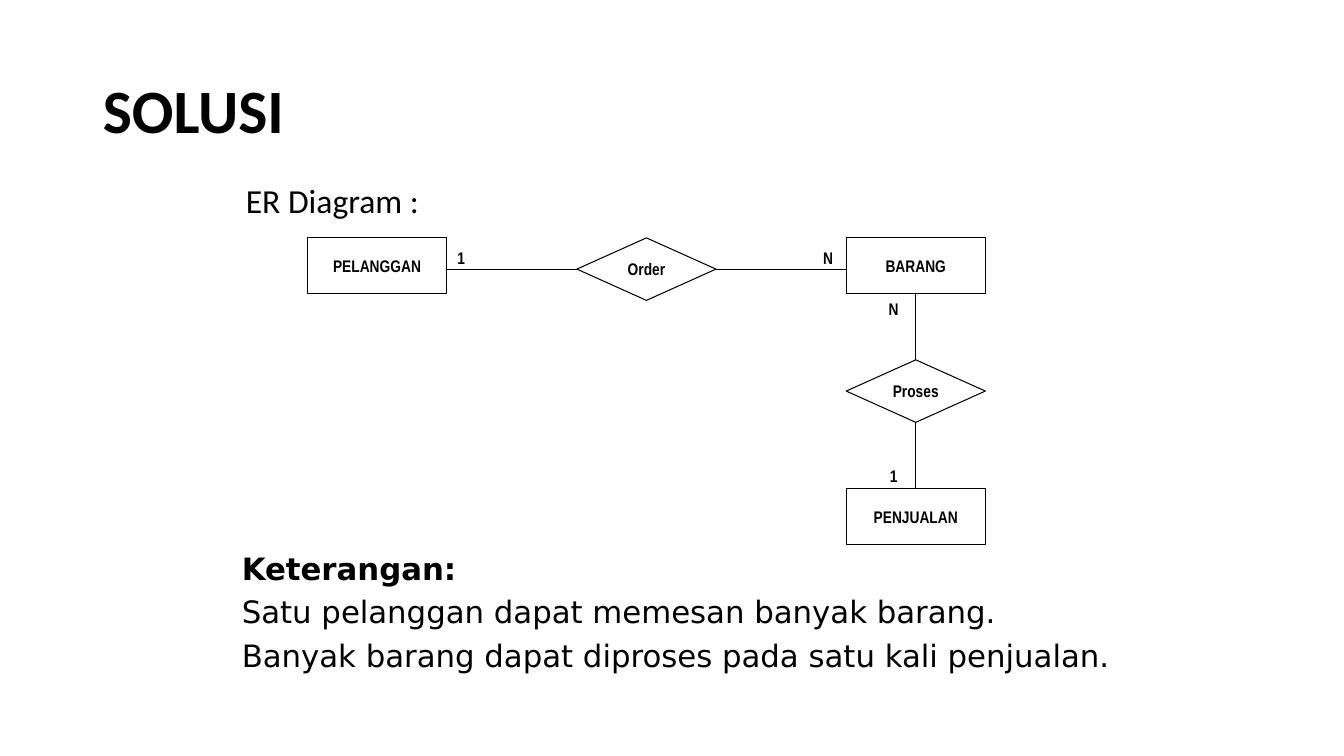
import pptx
import pptx.dml.color
import pptx.enum.shapes
import pptx.enum.text
import pptx.oxml.ns
import pptx.util
from lxml import etree

BLACK = pptx.dml.color.RGBColor(0x00, 0x00, 0x00)
WHITE = pptx.dml.color.RGBColor(0xFF, 0xFF, 0xFF)
PRESET = pptx.enum.shapes.MSO_SHAPE
ALIGN = pptx.enum.text.PP_ALIGN
ANCHOR = pptx.enum.text.MSO_ANCHOR
TOP, LEFT, BOTTOM, RIGHT = range(4)


class ErSlide:
    """Places elements on a grid of 100 columns by 100 rows."""

    title_font, body_font, diagram_font = "Calibri", "DejaVu Sans", "Arial Narrow"
    label_size = 12
    line_width = pptx.util.Pt(0.75)
    sizes = {PRESET.RECTANGLE: (10.35, 7.33), PRESET.DIAMOND: (10.35, 8.27)}
    label_box = (5.78, 4.4)

    def __init__(self, deck):
        self.slide = deck.slides.add_slide(deck.slide_layouts[5])
        self.column = deck.slide_width / 100
        self.row = deck.slide_height / 100

    def box(self, left, top, width, height):
        return (round(left * self.column), round(top * self.row),
                round(width * self.column), round(height * self.row))

    def centred(self, x, y, size):
        width, height = size
        return self.box(x - width / 2, y - height / 2, width, height)

    def format(self, paragraph, font, size, bold=False, align=ALIGN.LEFT):
        paragraph.alignment = align
        for run in paragraph.runs:
            run.font.name = font
            run.font.size = pptx.util.Pt(size)
            run.font.bold = bold
            run.font.color.rgb = BLACK

    def title(self, text, *place):
        heading = self.slide.shapes.title
        heading.left, heading.top, heading.width, heading.height = self.box(*place)
        heading.text_frame.text = text
        heading.text_frame.vertical_anchor = ANCHOR.MIDDLE
        heading.text_frame.paragraphs[0].line_spacing = 0.9
        self.format(heading.text_frame.paragraphs[0], self.title_font, 44, bold=True)

    def text(self, lines, place, font, size, hanging, spacing=1.0, bold_first=False):
        frame = self.slide.shapes.add_textbox(*self.box(*place)).text_frame
        frame.word_wrap = True
        frame.text = "\n".join(lines)
        for number, paragraph in enumerate(frame.paragraphs):
            indent = pptx.util.Inches(hanging)
            properties = paragraph._p.get_or_add_pPr()
            properties.set("marL", str(indent))
            properties.set("indent", str(-indent))
            paragraph.line_spacing = spacing
            if number:
                paragraph.space_before = pptx.util.Pt(5)
            self.format(paragraph, font, size, bold=bold_first and number == 0)

    def node(self, name, preset, x, y):
        node = self.slide.shapes.add_shape(preset, *self.centred(x, y, self.sizes[preset]))
        node.shadow.inherit = False
        node.fill.solid()
        node.fill.fore_color.rgb = WHITE
        node.line.color.rgb = BLACK
        node.line.width = self.line_width
        frame = node.text_frame
        frame.margin_left = frame.margin_right = frame.margin_top = frame.margin_bottom = 0
        frame.word_wrap = False
        frame.vertical_anchor = ANCHOR.MIDDLE
        frame.text = name
        self.format(frame.paragraphs[0], self.diagram_font, self.label_size, True, ALIGN.CENTER)
        return node

    def link(self, relation, relation_side, entity, entity_side):
        """Horizontal links run level with the diamond, vertical ones join both sides."""
        level = relation.top + relation.height // 2
        edge = entity.left + (entity.width if entity_side == RIGHT else 0)
        link = self.slide.shapes.add_connector(
            pptx.enum.shapes.MSO_CONNECTOR.STRAIGHT, relation.left, level, edge, level)
        link.begin_connect(relation, relation_side)
        if entity_side in (TOP, BOTTOM):
            link.end_connect(entity, entity_side)
        link.line.color.rgb = BLACK
        link.line.width = self.line_width
        etree.SubElement(link._element.spPr, pptx.oxml.ns.qn("a:effectLst"))

    def cardinality(self, mark, x, y):
        frame = self.slide.shapes.add_textbox(*self.centred(x, y, self.label_box)).text_frame
        frame.word_wrap = True
        frame.text = mark
        self.format(frame.paragraphs[0], self.diagram_font, self.label_size, True, ALIGN.CENTER)


def main():
    deck = pptx.Presentation()
    deck.slide_width = pptx.util.Inches(13.33)
    deck.slide_height = pptx.util.Inches(7.5)
    solution = ErSlide(deck)

    # Title, caption and explanation
    solution.title("SOLUSI", 6.9, 5.33, 86.25, 19.33)
    solution.text(["ER Diagram :"], (17.55, 23.73, 65.63, 13.6),
                  solution.title_font, 24, hanging=0.25, spacing=0.9)
    solution.text(["Keterangan:",
                   "Satu pelanggan dapat memesan banyak barang.",
                   "Banyak barang dapat diproses pada satu kali penjualan."],
                  (17.25, 72, 67.65, 18.93),
                  solution.body_font, 22, hanging=0.51, bold_first=True)

    # Entities and relations
    customer_x, order_x, goods_x = (28.06 + 20.04 * step for step in range(3))
    customer = solution.node("PELANGGAN", PRESET.RECTANGLE, customer_x, 35.13)
    order = solution.node("Order", PRESET.DIAMOND, order_x, 35.6)
    goods = solution.node("BARANG", PRESET.RECTANGLE, goods_x, 35.13)
    process = solution.node("Proses", PRESET.DIAMOND, goods_x, 51.73)
    sale = solution.node("PENJUALAN", PRESET.RECTANGLE, goods_x, 68.33)

    # Links
    solution.link(order, LEFT, customer, RIGHT)
    solution.link(order, RIGHT, goods, LEFT)
    solution.link(process, TOP, goods, BOTTOM)
    solution.link(process, BOTTOM, sale, TOP)

    # Cardinalities
    for mark, x, y in (("1", 34.31, 34.33), ("N", 61.61, 34.33),
                       ("N", 66.49, 41), ("1", 66.49, 63.13)):
        solution.cardinality(mark, x, y)

    deck.save("out.pptx")


if __name__ == "__main__":
    main()
